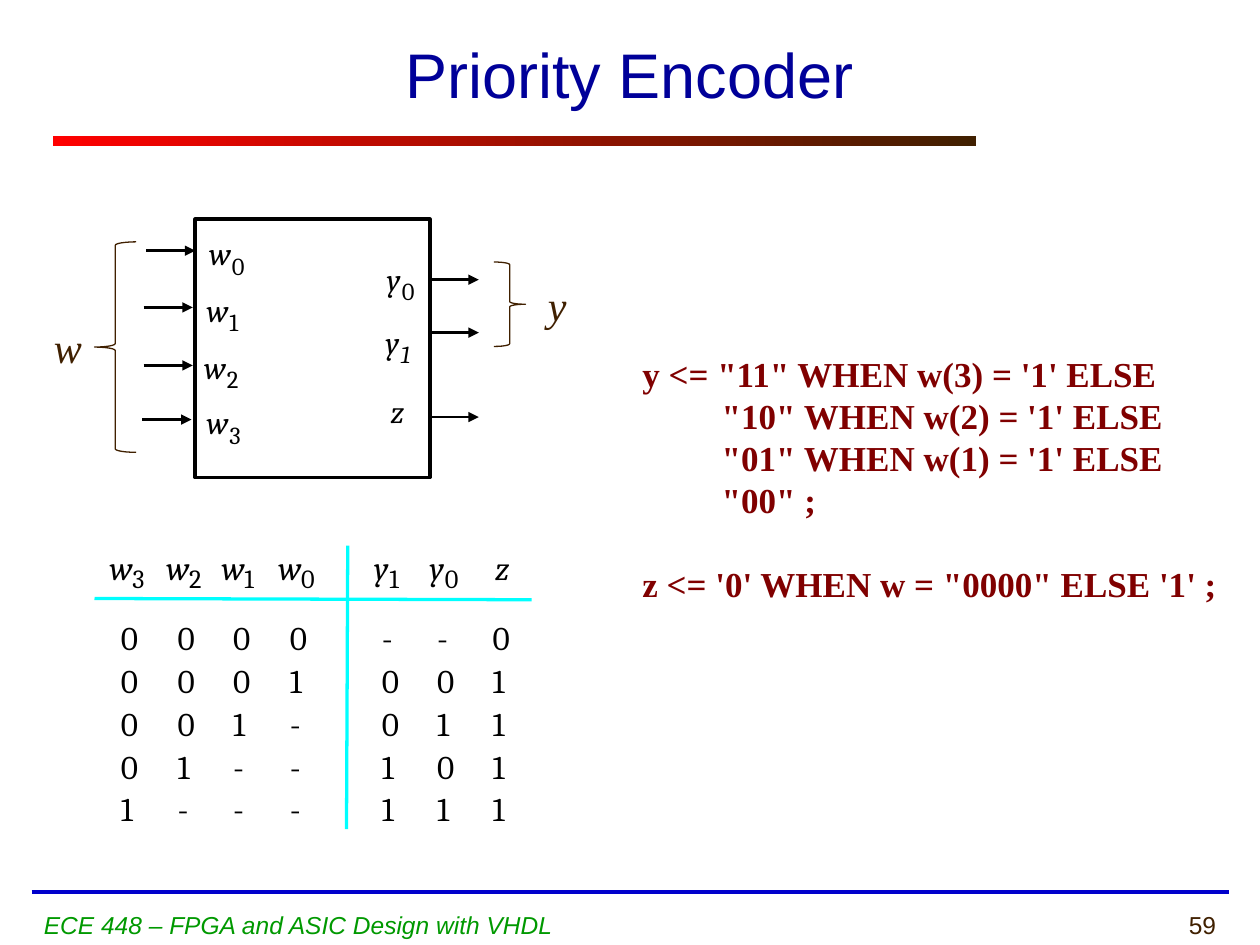
from dataclasses import dataclass

from lxml.etree import SubElement
from pptx import Presentation
from pptx.dml.color import RGBColor
from pptx.enum.shapes import MSO_CONNECTOR, MSO_SHAPE
from pptx.enum.text import MSO_ANCHOR, PP_ALIGN
from pptx.oxml.ns import qn
from pptx.util import Inches, Pt

COLORS = {
    "title": "000099", "brown": "402000", "red": "FF0000", "rule": "0000CC",
    "footer": "009900", "code": "800000", "ink": "000000", "grid": "00FFFF",
    "paper": "FFFFFF",
}
MATH_FONT = "Cambria"
SERIF = "Times New Roman"
BOX_LEFT, BOX_TOP, BOX_WIDTH, BOX_HEIGHT = 1.55, 1.74, 1.86, 2.05
BOX_RIGHT = BOX_LEFT + BOX_WIDTH


@dataclass
class Pin:
    name: str
    index: str
    x: float
    y: float
    arrow_start: float
    arrow_end: float
    arrow_y: float
    italic_index: bool = False


@dataclass
class Column:
    name: str
    index: str
    name_x: float
    value_x: float
    values: str


PINS = [
    Pin("w", "0", 1.66, 1.86, 1.16, BOX_LEFT, 1.99),
    Pin("w", "1", 1.64, 2.31, 1.14, 1.53, 2.44),
    Pin("w", "2", 1.62, 2.76, 1.14, 1.53, 2.90),
    Pin("w", "3", 1.64, 3.20, 1.13, 1.52, 3.33),
    Pin("y", "0", 3.07, 2.06, BOX_RIGHT, 3.8, 2.22),
    Pin("y", "1", 3.06, 2.56, BOX_RIGHT, 3.8, 2.64, italic_index=True),
    Pin("z", "", 3.10, 3.11, BOX_RIGHT, 3.8, 3.31),
]

COLUMNS = [
    Column("w", "3", 0.87, 0.96, "00001"),
    Column("w", "2", 1.32, 1.41, "0001-"),
    Column("w", "1", 1.76, 1.85, "001--"),
    Column("w", "0", 2.21, 2.30, "01---"),
    Column("y", "1", 2.97, 3.03, "-0011"),
    Column("y", "0", 3.41, 3.47, "-0101"),
    Column("z", "", 3.93, 3.91, "01111"),
]

# Each code line: text, left indent in inches, space before in points
CODE = [
    ("y <= \"11\" WHEN w(3) = '1' ELSE", 0, 0),
    ("\"10\" WHEN w(2) = '1' ELSE", 0.63, 0),
    ("\"01\" WHEN w(1) = '1' ELSE", 0.63, 0),
    ("\"00\" ;", 0.63, 0),
    ("z <= '0' WHEN w = \"0000\" ELSE '1' ;", 0, 24),
]


def rgb(name: str) -> RGBColor:
    return RGBColor.from_string(COLORS[name])


def add_text(slide, text: str, x: float, y: float, width: float, height: float, *,
             size: float, font: str = "Arial", color: str = "ink",
             bold: bool = False, italic: bool = False, align=PP_ALIGN.LEFT,
             anchor=MSO_ANCHOR.TOP, wrap: bool = True, inset: bool = True):
    frame = slide.shapes.add_textbox(
        Inches(x), Inches(y), Inches(width), Inches(height)).text_frame
    frame.word_wrap = wrap
    frame.vertical_anchor = anchor
    if not inset:
        frame.margin_left = frame.margin_right = 0
        frame.margin_top = frame.margin_bottom = 0
    frame.text = text
    for paragraph in frame.paragraphs:
        paragraph.alignment = align
        face = paragraph.font
        face.name, face.size = font, Pt(size)
        face.bold, face.italic = bold, italic
        face.color.rgb = rgb(color)
    return frame


def add_symbol(slide, name: str, index: str, x: float, y: float, *, size: float,
               index_size: float, drop: float, italic_index: bool = False) -> None:
    """Write a variable and its lowered index."""
    add_text(slide, name, x, y, 0.19, 0.32, size=size, font=MATH_FONT,
             italic=True, wrap=False, inset=False)
    if index:
        advance = 0.18 if name == "w" else 0.12
        add_text(slide, index, x + advance, y + drop, 0.12, 0.25, size=index_size,
                 font=MATH_FONT, italic=italic_index, wrap=False, inset=False)


def add_line(slide, x1: float, y1: float, x2: float, y2: float, *,
             color: str, width: float, arrow: bool = False) -> None:
    line = slide.shapes.add_connector(
        MSO_CONNECTOR.STRAIGHT, Inches(x1), Inches(y1), Inches(x2), Inches(y2))
    line.line.color.rgb = rgb(color)
    line.line.width = Pt(width)
    if arrow:
        SubElement(line.line._get_or_add_ln(), qn("a:tailEnd"), type="triangle")
    SubElement(line._element.spPr, qn("a:effectLst"))


def add_outline(slide, kind, x: float, y: float, width: float, height: float, *,
                color: str | None = None, weight: float = 0.75,
                fill: str | None = None):
    shape = slide.shapes.add_shape(
        kind, Inches(x), Inches(y), Inches(width), Inches(height))
    shape.shadow.inherit = False
    if fill:
        shape.fill.solid()
        shape.fill.fore_color.rgb = rgb(fill)
    else:
        shape.fill.background()
    if color:
        shape.line.color.rgb = rgb(color)
        shape.line.width = Pt(weight)
    else:
        shape.line.fill.background()
    return shape


def draw_frame(slide) -> None:
    # Title, gradient bar and footer
    add_line(slide, 0.25, 7.08, 9.75, 7.08, color="rule", width=2.25)
    bar = add_outline(slide, MSO_SHAPE.RECTANGLE, 0.42, 1.08, 7.33, 0.08)
    bar.fill.gradient()
    bar.fill.gradient_angle = 0
    for stop, color in zip(bar.fill.gradient_stops, ("red", "brown")):
        stop.color.rgb = rgb(color)
    add_text(slide, "59", 7.58, 7.17, 2.17, 0.33, size=14, color="brown",
             align=PP_ALIGN.RIGHT)
    add_text(slide, "ECE 448 – FPGA and ASIC Design with VHDL", 0.25, 7.17, 7.33, 0.33,
             size=14, color="footer", italic=True)
    add_text(slide, "Priority Encoder", 0.41, 0.17, 9.17, 0.83, size=36, color="title",
             align=PP_ALIGN.CENTER, anchor=MSO_ANCHOR.MIDDLE)


def draw_encoder(slide) -> None:
    # Block with its input and output pins
    add_outline(slide, MSO_SHAPE.RECTANGLE, BOX_LEFT, BOX_TOP, BOX_WIDTH, BOX_HEIGHT,
                color="ink", weight=2.25, fill="paper")
    for pin in PINS:
        add_line(slide, pin.arrow_start, pin.arrow_y, pin.arrow_end, pin.arrow_y,
                 color="ink", width=1.5, arrow=True)
        add_symbol(slide, pin.name, pin.index, pin.x, pin.y, size=18, index_size=14,
                   drop=0.13, italic_index=pin.italic_index)
    # Braces naming the buses
    add_outline(slide, MSO_SHAPE.LEFT_BRACE, 0.75, 1.92, 0.33, 1.67, color="brown")
    add_outline(slide, MSO_SHAPE.RIGHT_BRACE, 3.92, 2.08, 0.25, 0.67, color="brown")
    for bus, x, y in (("w", 0.33, 2.5), ("y", 4.25, 2.17)):
        add_text(slide, bus, x, y, 0.5, 0.51, size=24, font=SERIF, color="brown",
                 italic=True, wrap=False)


def draw_truth_table(slide) -> None:
    add_line(slide, 0.75, 4.75, 4.22, 4.76, color="grid", width=1.88)
    add_line(slide, 2.75, 6.58, 2.76, 4.33, color="grid", width=1.88)
    for column in COLUMNS:
        add_symbol(slide, column.name, column.index, column.name_x, 4.34, size=19,
                   index_size=15, drop=0.12)
        for row, value in enumerate(column.values):
            add_text(slide, value, column.value_x, 4.9 + 0.34 * row, 0.15, 0.32,
                     size=19, font=MATH_FONT, wrap=False, inset=False)


def draw_code(slide) -> None:
    frame = add_text(slide, "\n".join(text for text, _, _ in CODE), 5, 2.75, 4.8, 2.61,
                     size=20, font=SERIF, color="code", bold=True, wrap=False)
    for paragraph, (_, indent, gap) in zip(frame.paragraphs, CODE):
        paragraph.line_spacing = Pt(24)
        paragraph.space_before = Pt(gap)
        paragraph._p.get_or_add_pPr().set("marL", str(Inches(indent)))


def main() -> None:
    deck = Presentation()
    deck.slide_width, deck.slide_height = Inches(10), Inches(7.5)
    slide = deck.slides.add_slide(deck.slide_layouts[6])
    for draw in (draw_frame, draw_encoder, draw_truth_table, draw_code):
        draw(slide)
    deck.save("out.pptx")


if __name__ == "__main__":
    main()
